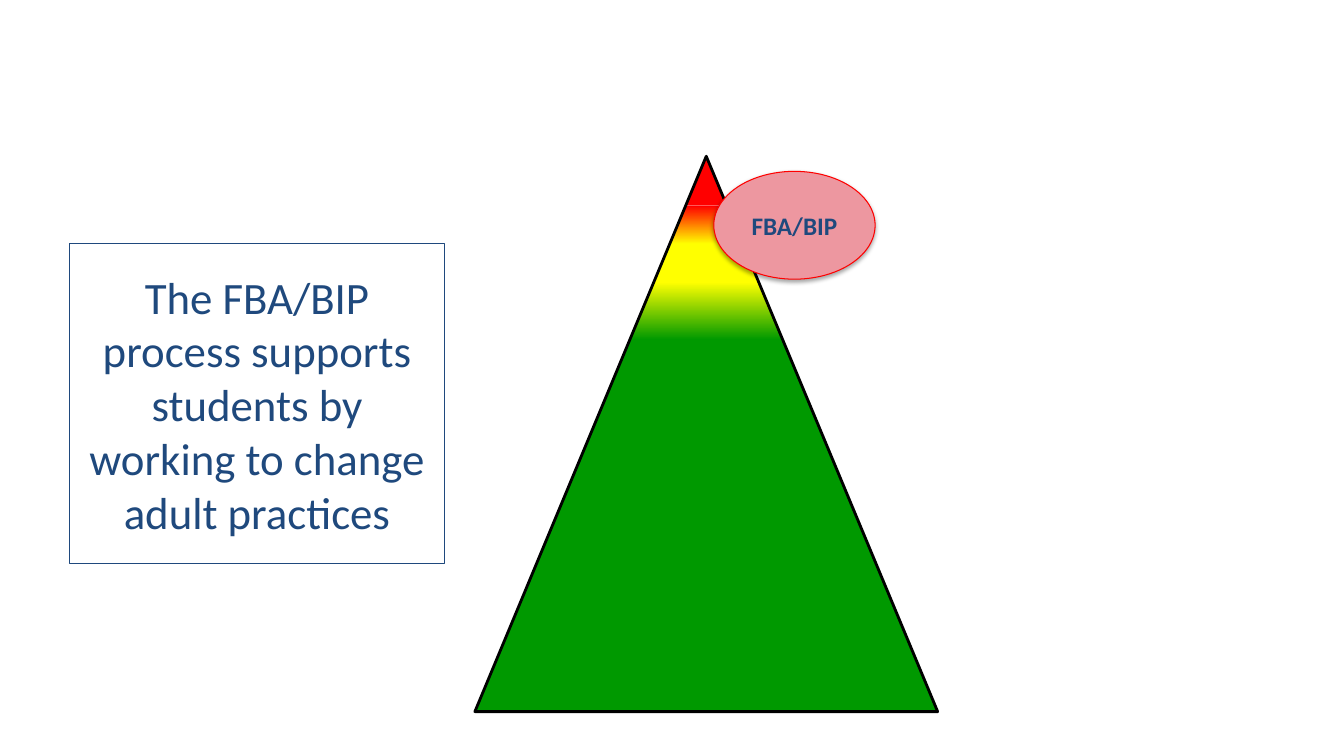
from lxml import etree
from pptx import Presentation, util as u
from pptx.dml.color import RGBColor
from pptx.enum import shapes, text
from pptx.oxml.ns import qn

NAVY, RED, YELLOW, GREEN = "1F497D", "FF0000", "FFFF00", "009900"


def color(hex_value):
    """Turn a hex string into a colour."""
    return RGBColor.from_string(hex_value)


def paint(shape, fill=None, line=None, width=0.75):
    """Give a shape a plain, graded or empty fill and an optional outline."""
    shape.shadow.inherit = False
    if fill is None:
        shape.fill.background()
    elif isinstance(fill, tuple):
        shape.fill.gradient()
        shape.fill.gradient_angle = 90
        for stop, hex_value in zip(shape.fill.gradient_stops, fill):
            stop.color.rgb = color(hex_value)
    else:
        shape.fill.solid()
        shape.fill.fore_color.rgb = color(fill)
    if line is None:
        shape.line.fill.background()
    else:
        shape.line.color.rgb = color(line)
        shape.line.width = u.Pt(width)


def add_preset(slide, kind, box):
    """Add a preset shape in a box given in inches."""
    return slide.shapes.add_shape(kind, *(u.Inches(length) for length in box))


def write(shape, wording, size, bold=False):
    """Centre navy wording in a shape."""
    frame = shape.text_frame
    frame.word_wrap = True
    frame.vertical_anchor = text.MSO_ANCHOR.MIDDLE
    frame.text = wording
    paragraph = frame.paragraphs[0]
    paragraph.alignment = text.PP_ALIGN.CENTER
    font = paragraph.runs[0].font
    font.name, font.size, font.bold = "Calibri", u.Pt(size), bold
    font.color.rgb = color(NAVY)


def add_pyramid(slide, box):
    """Draw the tiered pyramid: red tip, graded bands below it, black outline."""
    left, top, width, height = box
    center = left + width / 2

    def half_width(depth):
        return width / 2 * depth / height

    tip = 0.49
    tip_half = half_width(tip)
    paint(add_preset(slide, shapes.MSO_SHAPE.ISOSCELES_TRIANGLE,
                     (center - tip_half, top, 2 * tip_half, tip)), RED)
    bands = [
        (1.72, height, GREEN),
        (1.25, 1.82, (GREEN, YELLOW)),
        (0.87, 1.25, YELLOW),
        (tip, 0.87, (YELLOW, RED)),
    ]
    for upper, lower, fill in bands:
        corners = [(center + side * half_width(depth), top + depth)
                   for side, depth in ((-1, lower), (-1, upper), (1, upper), (1, lower))]
        points = [(u.Inches(x), u.Inches(y)) for x, y in corners]
        builder = slide.shapes.build_freeform(*points[0])
        builder.add_line_segments(points[1:], close=True)
        paint(builder.convert_to_shape(), fill)
    outline = add_preset(slide, shapes.MSO_SHAPE.ISOSCELES_TRIANGLE, box)
    paint(outline, line="000000", width=2)


def add_message(slide, box):
    """Place the framed statement."""
    message = add_preset(slide, shapes.MSO_SHAPE.RECTANGLE, box)
    paint(message, line=NAVY)
    write(message, "The FBA/BIP process supports students by working to change adult practices", 32)


def add_badge(slide, box):
    """Place the oval label with its soft shadow."""
    badge = add_preset(slide, shapes.MSO_SHAPE.OVAL, box)
    paint(badge, "ED97A0", RED)
    write(badge, "FBA/BIP", 18, bold=True)
    effects = badge.element.spPr.find(qn("a:effectLst"))
    shadow = etree.SubElement(effects, qn("a:outerShdw"), blurRad=str(u.Pt(3.1)),
                              dist=str(u.Pt(1.8)), dir="5400000", rotWithShape="0")
    shade = etree.SubElement(shadow, qn("a:srgbClr"), val="000000")
    etree.SubElement(shade, qn("a:alpha"), val="35000")


def main():
    """Build and save the slide."""
    presentation = Presentation()
    presentation.slide_width = u.Inches(13.33)
    presentation.slide_height = u.Inches(7.5)
    slide = presentation.slides.add_slide(presentation.slide_layouts[6])
    add_pyramid(slide, (4.71, 1.55, 4.59, 5.51))
    add_message(slide, (0.69, 2.42, 3.72, 3.17))
    add_badge(slide, (7.08, 1.7, 1.6, 1.07))
    presentation.save("out.pptx")


if __name__ == "__main__":
    main()
